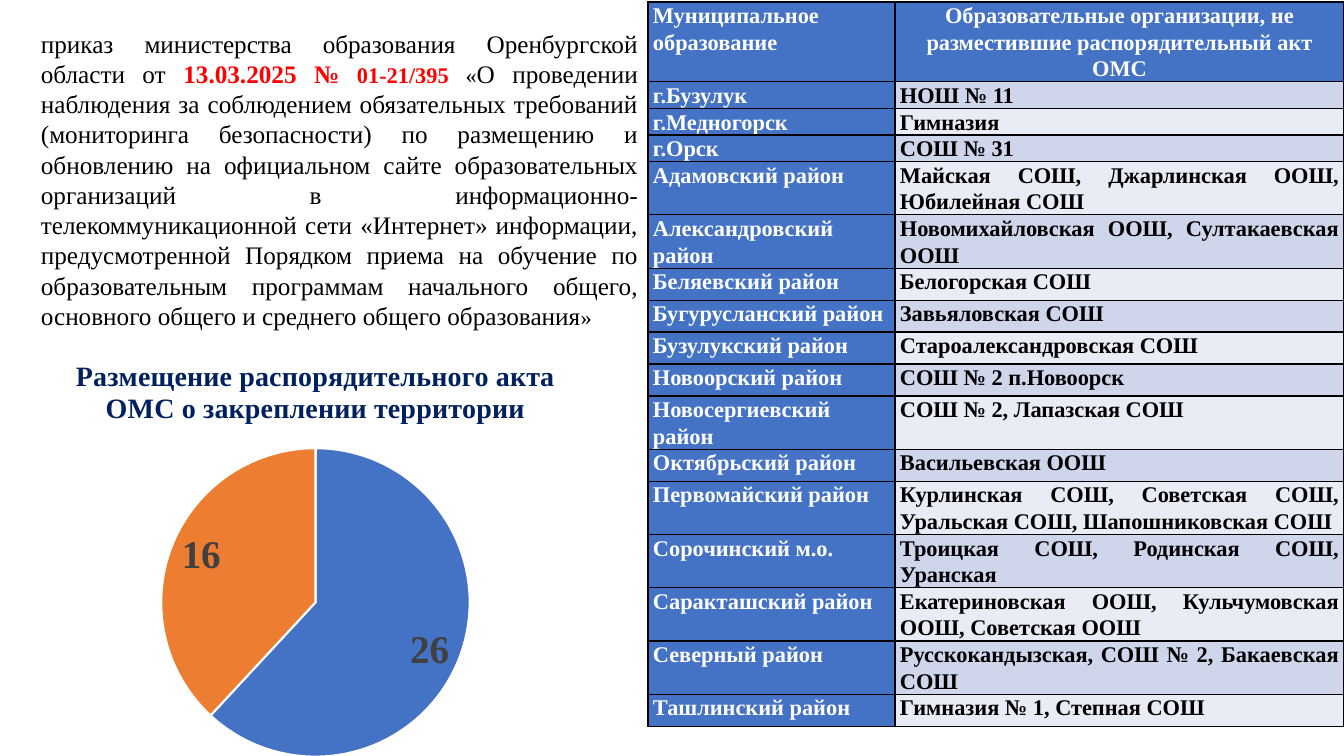
from lxml import etree
from pptx import Presentation
from pptx.chart.data import CategoryChartData
from pptx.dml.color import RGBColor
from pptx.enum import chart as charts, text
from pptx.oxml import parse_xml
from pptx.oxml.ns import nsdecls
from pptx.util import Emu, Pt

SERIF = "Times New Roman"
BLUE, ORANGE, NAVY, RED = "4472C4", "ED7D31", "002060", "FF0000"
BLACK, WHITE, GREY = "000000", "FFFFFF", "404040"
BANDS = ("CFD5EA", "E9EBF5")
LEFT, CENTER, JUSTIFY = text.PP_ALIGN.LEFT, text.PP_ALIGN.CENTER, text.PP_ALIGN.JUSTIFY

ORDER = [
    ("приказ министерства образования Оренбургской области от ", 18, BLACK, False),
    ("13.03.2025 № ", 18, RED, True),
    ("01-21/395 ", 16, RED, True),
    ("«", 16, BLACK, False),
    ("О проведении наблюдения за соблюдением обязательных требований "
     "(мониторинга безопасности) по размещению и обновлению на официальном сайте "
     "образовательных организаций в информационно-телекоммуникационной сети "
     "«Интернет» информации, предусмотренной Порядком приема на обучение по "
     "образовательным программам начального общего, основного общего и среднего "
     "общего образования", 18, BLACK, False),
    ("»", 16, BLACK, False),
]
HEADER = ("Муниципальное образование",
          "Образовательные организации, не разместившие распорядительный акт ОМС")
SCHOOLS = [
    ("г.Бузулук", "НОШ № 11"),
    ("г.Медногорск", "Гимназия"),
    ("г.Орск", "СОШ № 31"),
    ("Адамовский район", "Майская СОШ, Джарлинская ООШ, Юбилейная СОШ"),
    ("Александровский район", "Новомихайловская ООШ, Султакаевская ООШ"),
    ("Беляевский район", "Белогорская СОШ"),
    ("Бугурусланский район", "Завьяловская СОШ"),
    ("Бузулукский район", "Староалександровская СОШ"),
    ("Новоорский район", "СОШ № 2 п.Новоорск"),
    ("Новосергиевский район", "СОШ № 2, Лапазская СОШ"),
    ("Октябрьский район", "Васильевская ООШ"),
    ("Первомайский район",
     "Курлинская СОШ, Советская СОШ, Уральская СОШ, Шапошниковская СОШ"),
    ("Сорочинский м.о.", "Троицкая СОШ, Родинская СОШ, Уранская"),
    ("Саракташский район", "Екатериновская ООШ, Кульчумовская ООШ, Советская ООШ"),
    ("Северный район", "Русскокандызская, СОШ № 2, Бакаевская СОШ"),
    ("Ташлинский район", "Гимназия № 1, Степная СОШ"),
]
SHORT_ROWS = {1, 2, 3, 15}
COLUMNS = (247, 449)
CHART_TITLE = "Размещение распорядительного акта ОМС о закреплении территории"
SHARES = [("1", 26, BLUE), ("2", 16, ORANGE)]


def px(length):
    return Emu(round(length * 914400 / 100.8))


def rgb(color):
    return RGBColor.from_string(color)


def style(font, size, color, bold):
    font.name, font.size, font.bold = SERIF, Pt(size), bold
    font.color.rgb = rgb(color)


def write(paragraph, words, size=16, color=BLACK, bold=True, align=JUSTIFY):
    paragraph.alignment = align
    run = paragraph.add_run()
    run.text = words
    style(run.font, size, color, bold)


def border(cell):
    for i, side in enumerate(("lnL", "lnR", "lnT", "lnB")):
        cell._tc.get_or_add_tcPr().insert(i, parse_xml(
            f'<a:{side} {nsdecls("a")} w="12700"><a:solidFill>'
            f'<a:srgbClr val="{BLACK}"/></a:solidFill></a:{side}>'))


def add_schools(slide):
    rows = [HEADER] + SCHOOLS
    frame = slide.shapes.add_table(len(rows), 2, px(648), px(2), px(696), px(747))
    table = frame.table
    for column, width in zip(table.columns, COLUMNS):
        column.width = px(width)
    for r, row in enumerate(rows):
        table.rows[r].height = px(16 if r in SHORT_ROWS else 32)
        for c, words in enumerate(row):
            cell = table.cell(r, c)
            cell.margin_left = cell.margin_right = px(5)
            cell.margin_top = cell.margin_bottom = 0
            named = r == 0 or c == 0
            cell.fill.solid()
            cell.fill.fore_color.rgb = rgb(BLUE if named else BANDS[(r - 1) % 2])
            border(cell)
            align = JUSTIFY
            if c == 1 and r < 4:
                align = LEFT if r else CENTER
            paragraph = cell.text_frame.paragraphs[0]
            paragraph.line_spacing, paragraph.space_after = 1.07, Pt(8)
            write(paragraph, words, color=WHITE if named else BLACK, align=align)
    frame.height = px(747)


def add_shares(slide):
    data = CategoryChartData()
    data.categories = [name for name, _, _ in SHARES]
    data.add_series("Series 1", [value for _, value, _ in SHARES])
    chart = slide.shapes.add_chart(
        charts.XL_CHART_TYPE.PIE, px(7), px(339), px(617), px(432), data).chart
    chart.font.name, chart.font.size = "Calibri", Pt(10)
    chart.font.color.rgb = rgb(BLACK)
    chart.has_legend = False
    chart.has_title = True
    write(chart.chart_title.text_frame.paragraphs[0], CHART_TITLE,
          size=20, color=NAVY, align=CENTER)
    chart.chart_title.include_in_layout = False
    plot = chart.plots[0]
    plot.vary_by_categories = True
    plot.has_data_labels = True
    labels = plot.data_labels
    labels.show_value = True
    labels.position = charts.XL_LABEL_POSITION.BEST_FIT
    style(labels.font, 28, GREY, True)
    for i, (_, _, color) in enumerate(SHARES):
        slice_format = plot.series[0].points[i].format
        slice_format.fill.solid()
        slice_format.fill.fore_color.rgb = rgb(color)
        slice_format.line.color.rgb = rgb(WHITE)
        slice_format.line.width = Pt(1.5)
    area = chart._chartSpace.chart.plotArea
    for old in area.findall("{*}layout"):
        area.remove(old)
    layout = parse_xml(f'<c:layout {nsdecls("c")}><c:manualLayout/></c:layout>')
    for tag, value in (("layoutTarget", "inner"), ("xMode", "edge"), ("yMode", "edge"),
                       ("x", 0.25), ("y", 0.25), ("w", 0.5), ("h", 0.72)):
        etree.SubElement(layout[0], f"{{{layout.nsmap['c']}}}{tag}", val=str(value))
    area.insert(0, layout)


def add_order(slide):
    box = slide.shapes.add_textbox(px(31), px(23), px(617), px(316))
    box.text_frame.word_wrap = True
    box.text_frame.auto_size = text.MSO_AUTO_SIZE.SHAPE_TO_FIT_TEXT
    for words, size, color, bold in ORDER:
        write(box.text_frame.paragraphs[0], words, size=size, color=color, bold=bold)


def main():
    deck = Presentation()
    deck.slide_width, deck.slide_height = px(1344), px(756)
    slide = deck.slides.add_slide(deck.slide_layouts[6])
    add_schools(slide)
    add_shares(slide)
    add_order(slide)
    deck.save("out.pptx")


if __name__ == "__main__":
    main()
